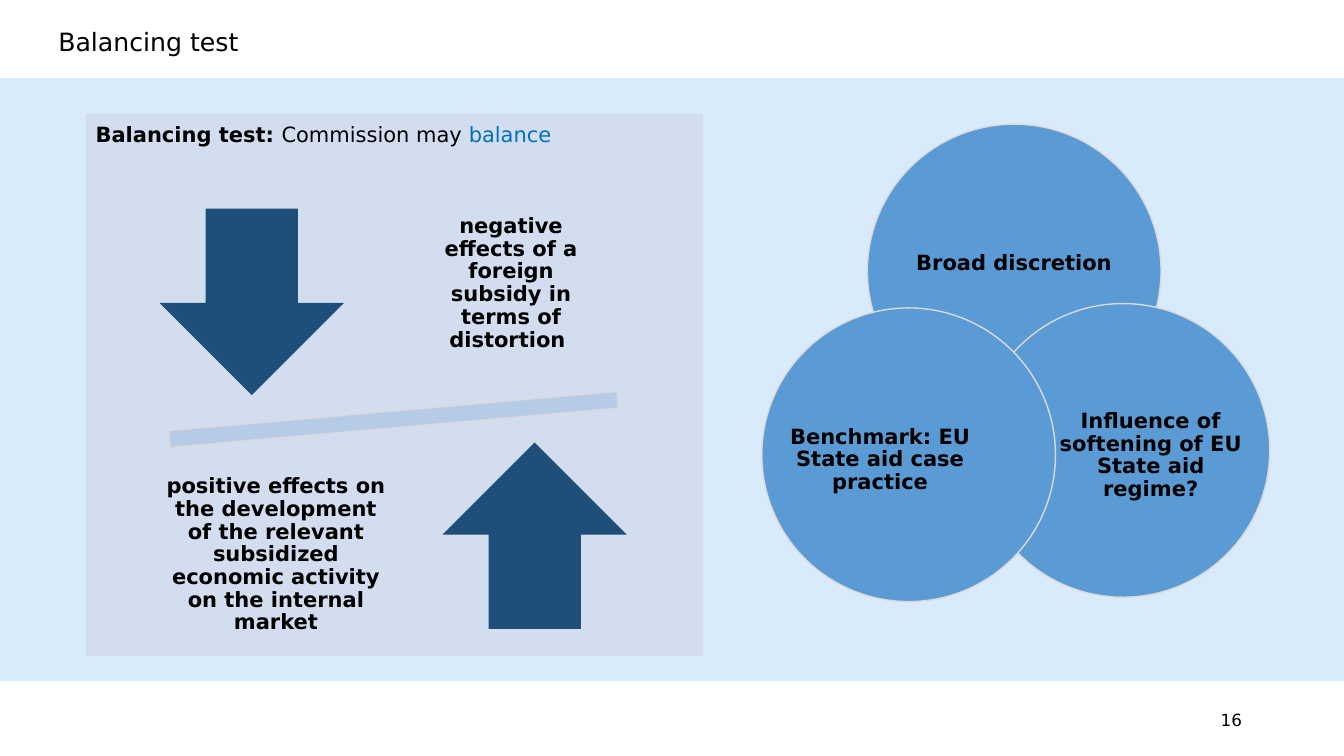
import pptx
import pptx.util
import pptx.dml.color
import pptx.enum.shapes
import pptx.enum.text

Cm = pptx.util.Cm
SHAPE = pptx.enum.shapes.MSO_SHAPE
ALIGN = pptx.enum.text.PP_ALIGN
ANCHOR = pptx.enum.text.MSO_ANCHOR

COLOURS = {
    "band": "D9EAFB",
    "panel": "D2DEEF",
    "arrow": "1F4E79",
    "beam": "B5CBE7",
    "outline": "D9D9D9",
    "circle": "5B9BD5",
    "text": "000000",
    "accent": "0070C0",
}
CIRCLE_SIZE = 7.4
ARROW_SIZE = (4.65, 4.7)


class SlideBuilder:
    font_name = "DejaVu Sans"
    label_size = 15

    def __init__(self, page):
        self.page = page

    def colour(self, name):
        return pptx.dml.color.RGBColor.from_string(COLOURS[name])

    def shape(self, kind, left, top, width, height, fill, outline=None, rotation=0):
        shape = self.page.shapes.add_shape(
            kind, Cm(left), Cm(top), Cm(width), Cm(height))
        shape.shadow.inherit = False
        shape.fill.solid()
        shape.fill.fore_color.rgb = self.colour(fill)
        if outline:
            shape.line.color.rgb = self.colour(outline)
            shape.line.width = pptx.util.Pt(1)
        else:
            shape.line.fill.background()
        shape.rotation = rotation
        return shape

    def fill_text(self, frame, spans, size, align, anchor, insets, bold=None):
        frame.word_wrap = True
        frame.vertical_anchor = anchor
        (frame.margin_left, frame.margin_top,
         frame.margin_right, frame.margin_bottom) = map(Cm, insets)
        para = frame.paragraphs[0]
        para.alignment = align
        para.line_spacing = 0.9
        para.font.name = self.font_name
        para.font.size = pptx.util.Pt(size)
        para.font.bold = bold
        para.font.color.rgb = self.colour("text")
        for text, span_bold, span_colour in spans:
            span = para.add_run()
            span.text = text
            if span_bold:
                span.font.bold = True
            span.font.color.rgb = self.colour(span_colour)

    def text(self, text, left, top, width, height, size,
             align=ALIGN.LEFT, anchor=ANCHOR.TOP, insets=(0.25, 0.13, 0.25, 0.13),
             bold=None):
        box = self.page.shapes.add_textbox(Cm(left), Cm(top), Cm(width), Cm(height))
        self.fill_text(box.text_frame, [(text, bold, "text")], size, align, anchor,
                       insets, bold)

    def label(self, text, left, top, width, height, inset=0):
        self.text(text, left, top, width, height, self.label_size,
                  ALIGN.CENTER, ANCHOR.MIDDLE, (inset,) * 4, True)

    def panel(self, spans, left, top, width, height):
        panel = self.shape(SHAPE.RECTANGLE, left, top, width, height, "panel", "panel")
        self.fill_text(panel.text_frame, spans, self.label_size, ALIGN.LEFT, ANCHOR.TOP,
                       (0.23, 0.23, 0.3, 0.33))

    def circle(self, left, top):
        self.shape(SHAPE.OVAL, left, top, CIRCLE_SIZE, CIRCLE_SIZE, "circle", "outline")


def main():
    deck = pptx.Presentation()
    deck.slide_width = Cm(33.87)
    deck.slide_height = Cm(19.05)
    builder = SlideBuilder(deck.slides.add_slide(deck.slide_layouts[6]))

    builder.shape(SHAPE.RECTANGLE, 0, 1.97, 33.87, 15.19, "band")
    builder.text("Balancing test", 1.22, 0.61, 30.99, 1.12, 18)
    builder.text("16", 23.93, 17.65, 7.62, 1.02, 12, ALIGN.RIGHT, ANCHOR.MIDDLE)

    builder.panel([("Balancing test: ", True, "text"),
                   ("Commission may ", False, "text"),
                   ("balance", False, "accent")], 2.18, 2.9, 15.52, 13.62)
    builder.shape(SHAPE.MATH_MINUS, 2.21, 9.68, 15.42, 1.78, "beam", "outline", 355)
    builder.shape(SHAPE.DOWN_ARROW, 4.02, 5.26, *ARROW_SIZE, "arrow")
    builder.shape(SHAPE.UP_ARROW, 11.15, 11.15, *ARROW_SIZE, "arrow")
    builder.label("negative effects of a foreign subsidy in terms of distortion ",
                  10.39, 4.67, 4.98, 4.95, 0.3)
    builder.label("positive effects on the development of the relevant subsidized "
                  "economic activity on the internal market",
                  3.73, 11.51, 6.45, 4.95, 0.3)

    circles = [
        ("Broad discretion", 21.86, 3.13, 0.99, 2.39, 5.41, 2.24),
        ("Influence of softening of EU State aid regime?",
         24.6, 7.65, 2.0, 1.7, 4.8, 4.27),
        ("Benchmark: EU State aid case practice",
         19.2, 7.76, 0.58, 1.7, 4.8, 4.27),
    ]
    for text, left, top, shift_x, shift_y, width, height in circles:
        builder.circle(left, top)
        builder.label(text, left + shift_x, top + shift_y, width, height)

    deck.save("out.pptx")


if __name__ == "__main__":
    main()
